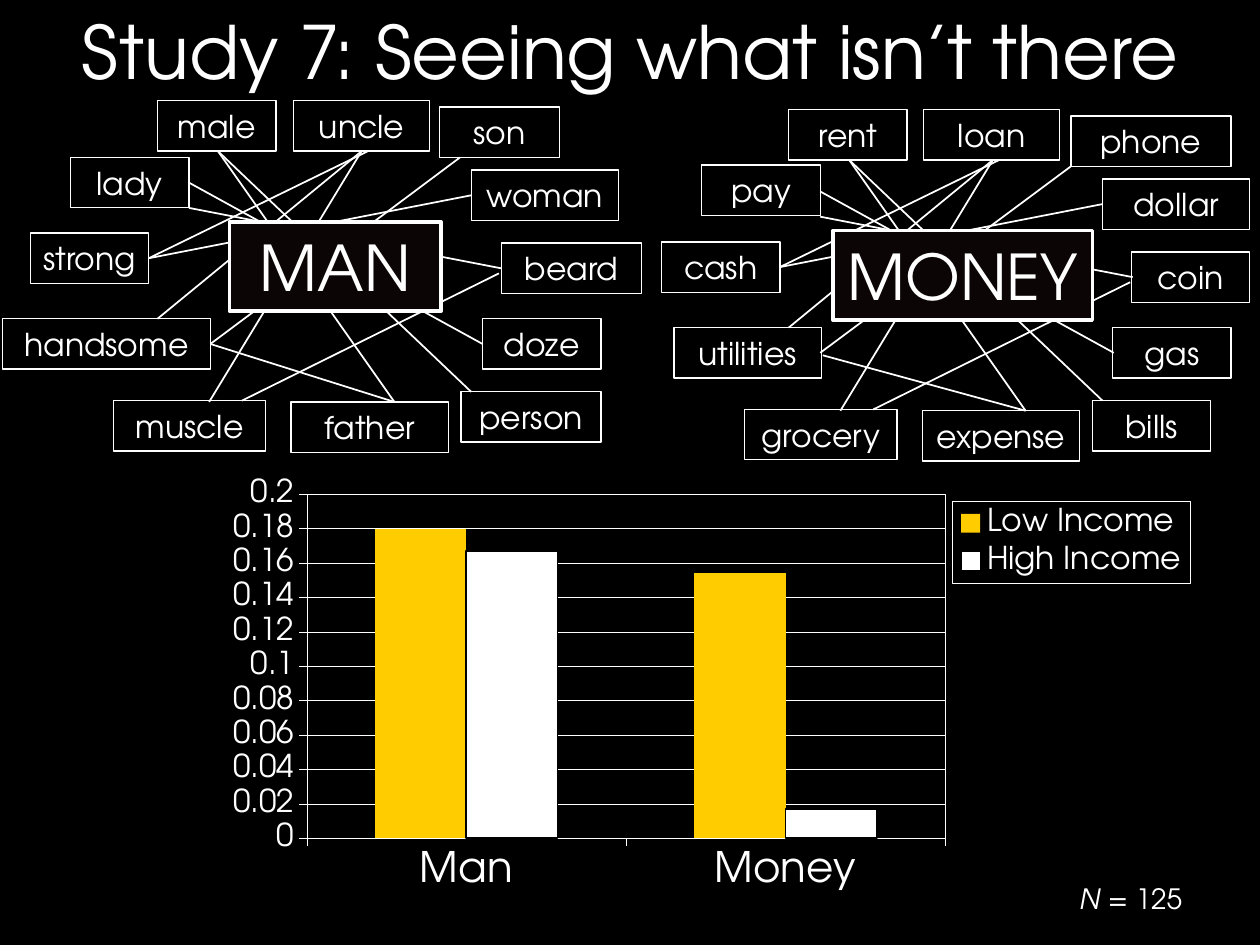
from dataclasses import dataclass

from lxml.etree import SubElement
from pptx import Presentation
from pptx.chart.data import CategoryChartData
from pptx.dml.color import RGBColor as RGB
from pptx.enum.chart import XL_CHART_TYPE as CHART, XL_LEGEND_POSITION as LEGEND
from pptx.enum.chart import XL_TICK_LABEL_POSITION as LABELS, XL_TICK_MARK as TICK
from pptx.enum.shapes import MSO_CONNECTOR as CONN, MSO_SHAPE as SHAPE
from pptx.enum.text import MSO_ANCHOR as ANCHOR, PP_ALIGN as ALIGN
from pptx.oxml import parse_xml
from pptx.oxml.ns import nsdecls, qn
from pptx.util import Inches, Pt


@dataclass(frozen=True)
class Theme:
    font: str = "TeX Gyre Adventor"
    black: RGB = RGB(0, 0, 0)
    white: RGB = RGB(255, 255, 255)
    hub: RGB = RGB(0x0B, 0x05, 0x06)
    gold: RGB = RGB(0xFF, 0xCC, 0)
    title: int = 42
    hub_size: int = 36
    category: int = 24
    word: int = 18
    note: int = 16


T = Theme()
BOX_H = 0.4
MONEY_DX, MONEY_DY = 5.01, 0.07

SHARED_LINKS = [
    (1.73, 1.2, 3.74, 3.11), (1.5, 1.65, 3.98, 2.13), (1.73, 1.2, 3.13, 3.19),
    (2.92, 1.2, 1.18, 2.05), (3.96, 2.17, 1.92, 3.18), (3.83, 2.73, 1.5, 1.45),
    (3.74, 1.55, 1.18, 2.05), (2.87, 1.2, 1.66, 3.19), (2.87, 1.2, 1.25, 2.53),
]
MAN_LINKS = [(3.65, 1.25, 1.67, 2.73), (3.13, 3.19, 1.67, 2.73)]
MONEY_LINKS = [(8.5, 1.32, 6.51, 2.8), (8.14, 3.26, 6.53, 2.82)]

MAN_WORDS = [
    ("lady", 0.56, 1.25, 0.94), ("male", 1.25, 0.8, 0.94), ("uncle", 2.33, 0.8, 1.08),
    ("son", 3.49, 0.85, 0.95), ("woman", 3.74, 1.35, 1.17), ("beard", 3.98, 1.93, 1.11),
    ("doze", 3.83, 2.53, 0.94), ("person", 3.66, 3.11, 1.11), ("father", 2.31, 3.19, 1.25),
    ("muscle", 0.9, 3.18, 1.21), ("handsome", 0.02, 2.53, 1.65), ("strong", 0.24, 1.85, 0.94),
]
MONEY_WORDS = [
    ("pay", 5.57, 1.31, 0.94), ("rent", 6.26, 0.87, 0.94), ("loan", 7.33, 0.87, 1.08),
    ("phone", 8.5, 0.92, 1.27), ("dollar", 8.75, 1.42, 1.17), ("coin", 8.98, 2, 0.94),
    ("gas", 8.83, 2.6, 0.94), ("bills", 8.67, 3.18, 0.94), ("expense", 7.32, 3.26, 1.25),
    ("grocery", 5.91, 3.25, 1.21), ("utilities", 5.35, 2.6, 1.17), ("cash", 5.25, 1.92, 0.94),
]


def set_attrs(obj, values):
    for name, value in values.items():
        setattr(obj, name, value)


def style_font(font, size, **extra):
    set_attrs(font, {"name": T.font, "size": Pt(size), **extra})
    font.color.rgb = T.white


def style_line(line, width, color=T.white):
    line.color.rgb = color
    line.width = Pt(width)


def write(tf, runs, size, anchor=ANCHOR.MIDDLE, wrap=True):
    set_attrs(tf, {"word_wrap": wrap, "vertical_anchor": anchor})
    p = tf.paragraphs[0]
    p.alignment = ALIGN.CENTER
    for text, extra in runs:
        r = p.add_run()
        r.text = text
        style_font(r.font, size, **extra)


def add_title(s, text):
    sp = s.shapes.title
    set_attrs(sp, {"left": 0, "top": 0, "width": Inches(9), "height": Inches(1.25)})
    sp.left = Inches(0.5)
    write(sp.text_frame, [(text, {})], T.title, ANCHOR.TOP)


def add_box(s, text, x, y, w, h=BOX_H, size=T.word, border=0.75, fill=None):
    sp = s.shapes.add_shape(SHAPE.RECTANGLE, *map(Inches, (x, y, w, h)))
    sp.shadow.inherit = False
    if fill is None:
        sp.fill.background()
    else:
        sp.fill.solid()
        sp.fill.fore_color.rgb = fill
    style_line(sp.line, border)
    write(sp.text_frame, [(text, {})], size)


def add_link(s, x1, y1, x2, y2):
    link = s.shapes.add_connector(CONN.STRAIGHT, *map(Inches, (x1, y1, x2, y2)))
    style_line(link.line, 1)
    SubElement(link._element.spPr, qn("a:effectLst"))


def add_web(s, hub, words, links):
    for link in links:
        add_link(s, *link)
    for word in words:
        add_box(s, *word)
    add_box(s, *hub, h=0.71, size=T.hub_size, border=2, fill=T.hub)


def layout_xml(x, y, w, h, inner=False):
    target = '<c:layoutTarget val="inner"/>' if inner else ""
    return parse_xml(
        f'<c:layout {nsdecls("c")}><c:manualLayout>{target}'
        '<c:xMode val="edge"/><c:yMode val="edge"/>'
        f'<c:x val="{x}"/><c:y val="{y}"/><c:w val="{w}"/><c:h val="{h}"/>'
        '</c:manualLayout></c:layout>')


def outline_xml(fill):
    return parse_xml(
        f'<c:spPr {nsdecls("c", "a")}>{fill}<a:ln w="3175"><a:solidFill>'
        f'<a:srgbClr val="{T.white}"/></a:solidFill></a:ln></c:spPr>')


def style_axis(axis, size):
    set_attrs(axis, {"major_tick_mark": TICK.OUTSIDE, "minor_tick_mark": TICK.NONE})
    style_font(axis.tick_labels.font, size)
    style_line(axis.format.line, 0.25)


def add_legend(chart):
    chart.has_legend = True
    legend = chart.legend
    set_attrs(legend, {"position": LEGEND.RIGHT, "include_in_layout": False})
    style_font(legend.font, T.word)
    el = legend._element
    for old in el.findall(qn("c:layout")):
        el.remove(old)
    el.find(qn("c:legendPos")).addnext(layout_xml(0.75, 0.08, 0.23, 0.17))
    el.find(qn("c:txPr")).addprevious(outline_xml("<a:noFill/>"))


def add_income_chart(s):
    data = CategoryChartData()
    data.categories = ["Man", "Money"]
    data.add_series("Low Income", [0.18, 0.154])
    data.add_series("High Income", [0.167, 0.017])
    frame = (1.41, 3.67, 8.2, 3.83)
    chart = s.shapes.add_chart(CHART.COLUMN_CLUSTERED, *map(Inches, frame), data).chart
    chart.has_title = False
    style_font(chart.font, T.word)
    plot = chart.plots[0]
    set_attrs(plot, {"gap_width": 150, "overlap": 0, "vary_by_categories": False})
    for series, color in zip(plot.series, (T.gold, T.white)):
        series.format.fill.solid()
        series.format.fill.fore_color.rgb = color
    style_line(plot.series[1].format.line, 1, T.black)

    style_axis(chart.category_axis, T.category)
    chart.category_axis.tick_label_position = LABELS.LOW
    axis = chart.value_axis
    style_axis(axis, T.word)
    set_attrs(axis, {"minimum_scale": 0, "maximum_scale": 0.2, "major_unit": 0.02})
    set_attrs(axis.tick_labels, {"number_format": "General", "number_format_is_linked": False})
    style_line(axis.major_gridlines.format.line, 0.25)

    area = chart._chartSpace.chart.plotArea
    for old in area.findall(qn("c:layout")):
        area.remove(old)
    area.insert(0, layout_xml(0.125, 0.066, 0.618, 0.713, inner=True))
    area.append(outline_xml(f'<a:solidFill><a:srgbClr val="{T.black}"/></a:solidFill>'))
    add_legend(chart)


def add_note(s):
    sp = s.shapes.add_textbox(*map(Inches, (8.14, 6.92, 1.67, 0.42)))
    write(sp.text_frame, [("N", {"italic": True}), (" = 125", {})], T.note, wrap=False)


def main():
    prs = Presentation()
    set_attrs(prs, {"slide_width": Inches(10), "slide_height": Inches(7.5)})
    s = prs.slides.add_slide(prs.slide_layouts[5])
    s.background.fill.solid()
    s.background.fill.fore_color.rgb = T.black
    add_title(s, "Study 7: Seeing what isn’t there")
    shifted = [(x1 + MONEY_DX, y1 + MONEY_DY, x2 + MONEY_DX, y2 + MONEY_DY)
               for x1, y1, x2, y2 in SHARED_LINKS]
    add_web(s, ("MONEY", 6.61, 1.83, 2.06), MONEY_WORDS, shifted + MONEY_LINKS)
    add_web(s, ("MAN", 1.82, 1.76, 1.68), MAN_WORDS, SHARED_LINKS + MAN_LINKS)
    add_income_chart(s)
    add_note(s)
    prs.save("out.pptx")


if __name__ == "__main__":
    main()
